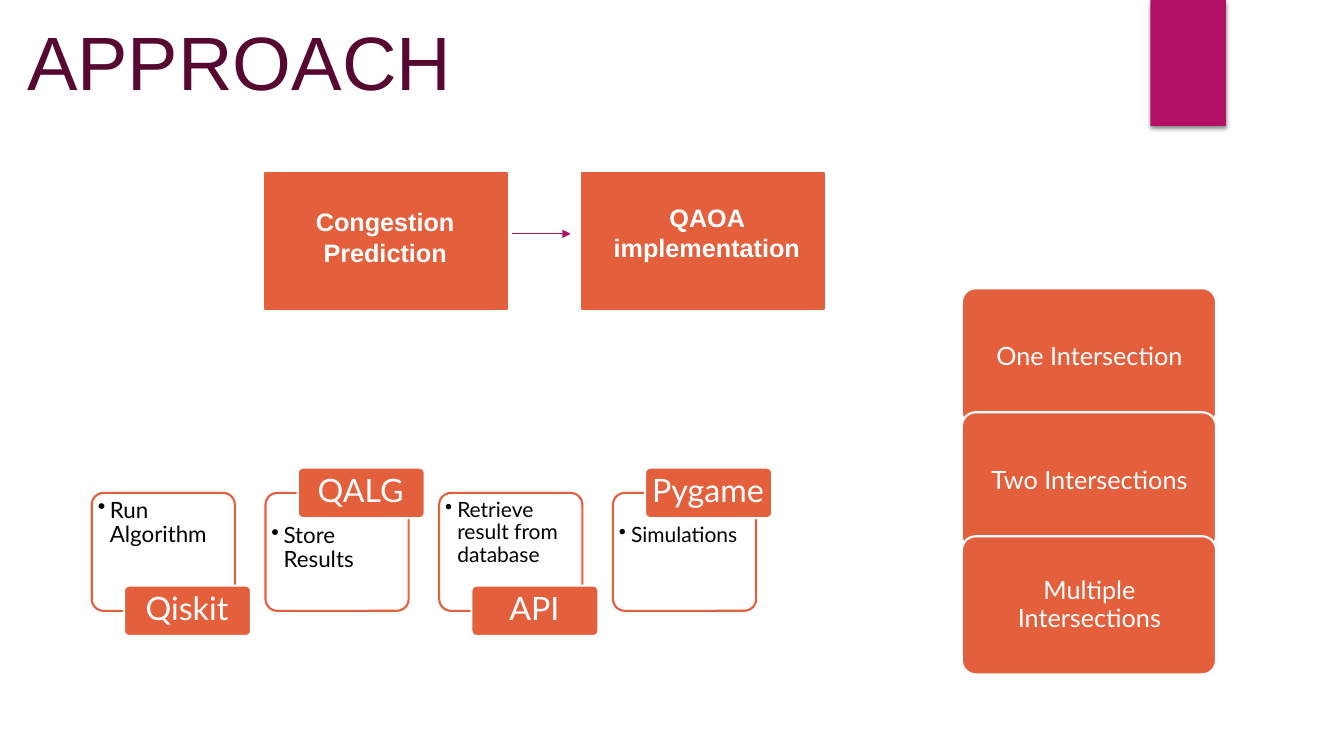
from lxml import etree
from pptx import Presentation
from pptx import util as u
from pptx.dml.color import RGBColor
from pptx.enum import shapes, text
from pptx.oxml import parse_xml
from pptx.oxml.ns import qn

NS = 'xmlns:a="http://schemas.openxmlformats.org/drawingml/2006/main"'
ORANGE, PINK, PLUM = "E45F3C", "B31166", "570831"
WHITE, BLACK = "FFFFFF", "000000"
RECT = shapes.MSO_SHAPE.RECTANGLE
ROUND = shapes.MSO_SHAPE.ROUNDED_RECTANGLE
MID, TOP = text.MSO_ANCHOR.MIDDLE, text.MSO_ANCHOR.TOP

STEPS = [
    ("Run Algorithm", 16, "Qiskit"),
    ("Store Results", 16, "QALG"),
    ("Retrieve result from database", 15, "API"),
    ("Simulations", 15, "Pygame"),
]
STAGES = ["One Intersection", "Two Intersections", "Multiple Intersections"]


def paint(target, color):
    target.rgb = RGBColor.from_string(color)


def inches(*sizes):
    return [u.Inches(size) for size in sizes]


def block(slide, kind, at, fill, line=None, alpha=None):
    shape = slide.shapes.add_shape(kind, *inches(*at))
    shape.shadow.inherit = False
    shape.fill.solid()
    paint(shape.fill.fore_color, fill)
    if kind == ROUND:
        shape.adjustments[0] = 0.1
    if line:
        paint(shape.line.color, line)
        shape.line.width = u.Pt(1.5)
    else:
        shape.line.fill.background()
    if alpha:
        tint = shape.fill._xPr.find(".//" + qn("a:srgbClr"))
        etree.SubElement(tint, qn("a:alpha"), val=str(alpha * 1000))
    return shape


def label(slide, at, words, size, color=WHITE, font="Lato", bold=False,
          pad=(0.1, 0.05), anchor=TOP, space=None, bullet=False):
    frame = slide.shapes.add_textbox(*inches(*at)).text_frame
    frame.word_wrap = True
    frame.vertical_anchor = anchor
    frame.margin_left = frame.margin_right = u.Inches(pad[0])
    frame.margin_top = frame.margin_bottom = u.Inches(pad[1])
    para = frame.paragraphs[0]
    para.text = words
    para.alignment = text.PP_ALIGN.LEFT if bullet else text.PP_ALIGN.CENTER
    if space:
        para.line_spacing = space
    if bullet:
        props = para._p.get_or_add_pPr()
        props.set("marL", str(u.Inches(0.12)))
        props.set("indent", str(u.Inches(-0.12)))
        etree.SubElement(props, qn("a:buChar"), char="•")
    para.font.name = font
    para.font.size = u.Pt(size)
    para.font.bold = bold
    paint(para.font.color, color)


def ribbon(slide):
    shape = block(slide, RECT, (11.41, 0, 0.75, 1.25), PINK)
    effects = shape._element.spPr.find(qn("a:effectLst"))
    effects.append(parse_xml(
        f'<a:outerShdw {NS} blurRad="{u.Pt(3)}" dist="{u.Pt(2)}" dir="5400000">'
        f'<a:srgbClr val="{BLACK}"><a:alpha val="45000"/></a:srgbClr>'
        '</a:outerShdw>'))


def arrow(slide, left, right, y):
    line = slide.shapes.add_connector(
        shapes.MSO_CONNECTOR.STRAIGHT, *inches(left, y, right, y))
    paint(line.line.color, PINK)
    line.line.width = u.Pt(0.75)
    etree.SubElement(line.line._get_or_add_ln(), qn("a:tailEnd"), type="triangle")
    etree.SubElement(line._element.spPr, qn("a:effectLst"))


def step(slide, num, note, size, name):
    left = 0.91 + 1.723 * num
    high = num % 2 == 1
    block(slide, ROUND, (left, 4.89, 1.42, 1.17), WHITE, ORANGE, 90)
    label(slide, (left + 0.03, 5.17 if high else 4.92, 1.36, 0.86), note, size,
          BLACK, pad=(0.03, 0.03), space=0.9, bullet=True)
    tab, top = left + 0.32, 4.64 if high else 5.81
    block(slide, ROUND, (tab, top, 1.26, 0.5), ORANGE, WHITE)
    label(slide, (tab + 0.01, top + 0.01, 1.23, 0.47), name, 23,
          pad=(0.05, 0.03), anchor=MID, space=0.9)


def stage(slide, num, name):
    top = 2.86 + 1.23 * num
    block(slide, ROUND, (9.54, top, 2.52, 1.37), ORANGE, WHITE)
    label(slide, (9.58, top + 0.04, 2.45, 1.29), name, 18,
          pad=(0.07, 0.07), anchor=MID, space=0.9)


def phase(slide, left, at, name):
    block(slide, RECT, (left, 1.72, 2.4, 1.35), ORANGE, ORANGE)
    label(slide, (*at, 2.32, 0.71), name, 18, font="Arial", bold=True)


def main():
    deck = Presentation()
    deck.slide_width, deck.slide_height = inches(13.33, 7.5)
    slide = deck.slides.add_slide(deck.slide_layouts[6])
    ribbon(slide)
    for num, item in enumerate(STEPS):
        step(slide, num, *item)
    phase(slide, 2.63, (2.66, 2), "Congestion Prediction")
    phase(slide, 5.77, (5.85, 1.96), "QAOA implementation")
    arrow(slide, 5.08, 5.66, 2.32)
    for num, name in enumerate(STAGES):
        stage(slide, num, name)
    label(slide, (-3.41, 0.1, 11.57, 1.01), "APPROACH", 54, PLUM, "Arial")
    deck.save("out.pptx")


if __name__ == "__main__":
    main()
